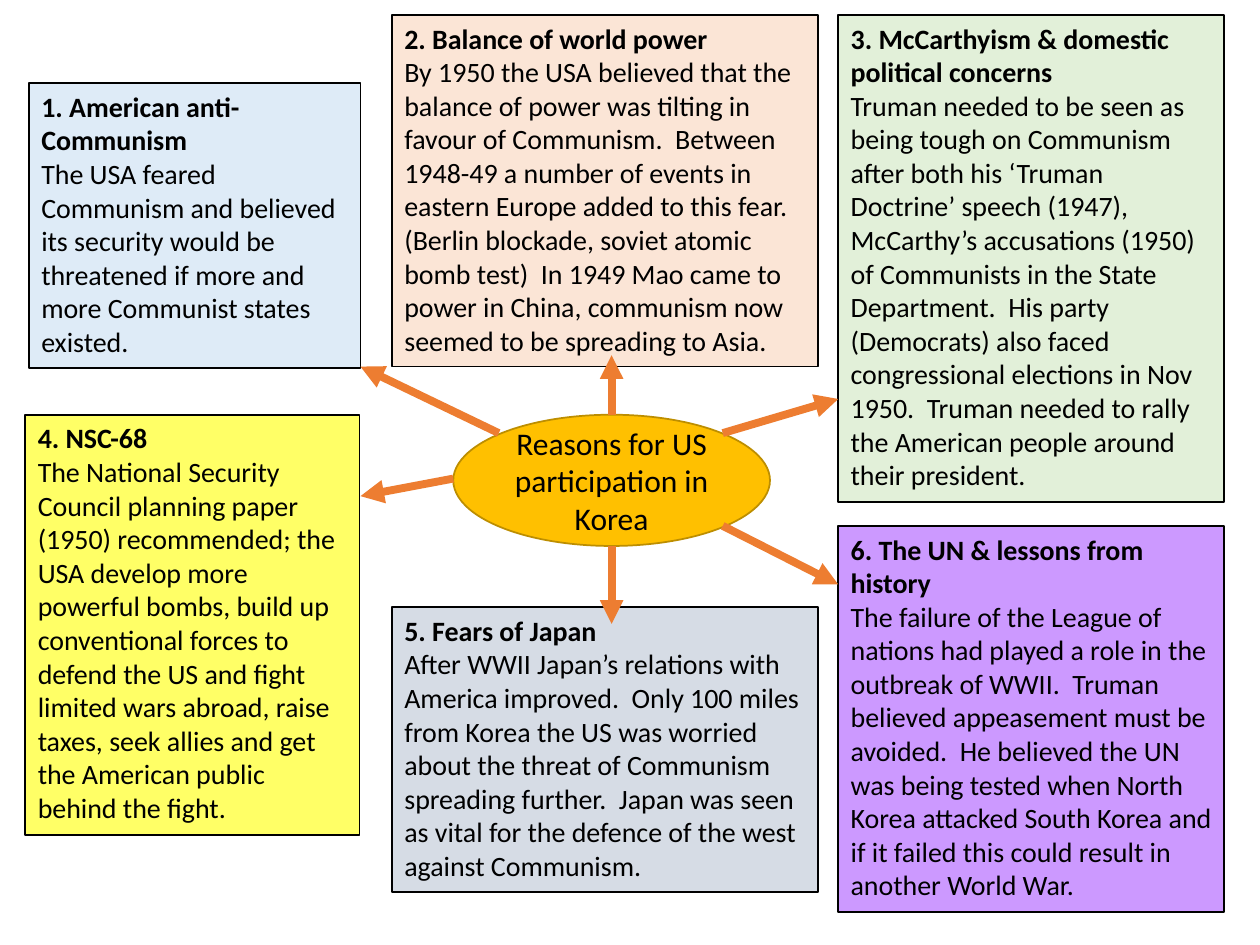
from pptx import Presentation
from pptx.dml.color import RGBColor
from pptx.enum.shapes import MSO_CONNECTOR, MSO_SHAPE
from pptx.enum.text import MSO_ANCHOR, MSO_AUTO_SIZE, PP_ALIGN
from pptx.oxml.ns import qn
from pptx.util import Pt
from lxml.etree import SubElement

FONT = "Calibri"
BLACK = RGBColor(0x00, 0x00, 0x00)
GOLD = RGBColor(0xFF, 0xC0, 0x00)
DARK_GOLD = RGBColor(0xBD, 0x8E, 0x00)
ORANGE = RGBColor(0xED, 0x7D, 0x31)
BLUE = RGBColor(0xDE, 0xEB, 0xF7)
PEACH = RGBColor(0xFB, 0xE5, 0xD6)
GREEN = RGBColor(0xE2, 0xF0, 0xD9)
YELLOW = RGBColor(0xFF, 0xFF, 0x66)
GREY = RGBColor(0xD6, 0xDC, 0xE5)
PURPLE = RGBColor(0xCC, 0x99, 0xFF)

MIDDLE_X, MIDDLE_W = 224, 243.5
RIGHT_X, RIGHT_W = 479, 220.5
LEFT_EDGE = 206
CENTRE_X = 349.5

REASONS = [
    ((16.5, 47.5, 189.5, 163), BLUE, "1. American anti-Communism",
     "The USA feared Communism and believed its security would be threatened "
     "if more and more Communist states existed."),
    ((MIDDLE_X, 8.5, MIDDLE_W, 201), PEACH, "2. Balance of world power",
     "By 1950 the USA believed that the balance of power was tilting in favour "
     "of Communism.  Between 1948-49 a number of events in eastern Europe added "
     "to this fear. (Berlin blockade, soviet atomic bomb test)  In 1949 Mao came "
     "to power in China, communism now seemed to be spreading to Asia."),
    ((RIGHT_X, 8.5, RIGHT_W, 278.5), GREEN,
     "3. McCarthyism & domestic political concerns",
     "Truman needed to be seen as being tough on Communism after both his "
     "‘Truman Doctrine’ speech (1947), McCarthy’s accusations (1950) of "
     "Communists in the State Department.  His party (Democrats) also faced "
     "congressional elections in Nov 1950.  Truman needed to rally the American "
     "people around their president."),
    ((14.5, 237, 191, 240), YELLOW, "4. NSC-68",
     "The National Security Council planning paper (1950) recommended; the USA "
     "develop more powerful bombs, build up conventional forces to defend the US "
     "and fight limited wars abroad, raise taxes, seek allies and get the "
     "American public behind the fight."),
    ((MIDDLE_X, 347, MIDDLE_W, 163), GREY, "5. Fears of Japan",
     "After WWII Japan’s relations with America improved.  Only 100 miles from "
     "Korea the US was worried about the threat of Communism spreading further.  "
     "Japan was seen as vital for the defence of the west against Communism."),
    ((RIGHT_X, 300.5, RIGHT_W, 220.5), PURPLE, "6. The UN & lessons from history",
     "The failure of the League of nations had played a role in the outbreak of "
     "WWII.  Truman believed appeasement must be avoided.  He believed the UN was "
     "being tested when North Korea attacked South Korea and if it failed this "
     "could result in another World War."),
]

ARROWS = [
    (285, 247.5, LEFT_EDGE, 209.5),
    (CENTRE_X, 237, CENTRE_X, 203),
    (259, 273.5, LEFT_EDGE, 283.5),
    (413, 247.5, RIGHT_X, 228),
    (CENTRE_X, 312, CENTRE_X, 356.5),
    (413, 300.5, RIGHT_X, 334),
]


def set_colours(sp, fill, line):
    sp.fill.solid()
    sp.fill.fore_color.rgb = fill
    sp.line.color.rgb = line
    sp.line.width = Pt(1)


def set_text(p, text, size, bold=False):
    p.text = text
    p.font.name = FONT
    p.font.size = Pt(size)
    p.font.bold = bold
    p.font.color.rgb = BLACK


def add_topic(s, text):
    sp = s.shapes.add_shape(MSO_SHAPE.OVAL, Pt(259), Pt(237), Pt(181), Pt(75))
    sp.shadow.inherit = False
    set_colours(sp, GOLD, DARK_GOLD)
    tf = sp.text_frame
    tf.word_wrap = True
    tf.vertical_anchor = MSO_ANCHOR.MIDDLE
    p = tf.paragraphs[0]
    p.alignment = PP_ALIGN.CENTER
    set_text(p, text, 18)


def add_reason(s, box, fill, heading, body):
    sp = s.shapes.add_textbox(*map(Pt, box))
    set_colours(sp, fill, BLACK)
    tf = sp.text_frame
    tf.word_wrap = True
    tf.auto_size = MSO_AUTO_SIZE.SHAPE_TO_FIT_TEXT
    set_text(tf.paragraphs[0], heading, 16, bold=True)
    set_text(tf.add_paragraph(), body, 16)


def add_arrow(s, ends):
    cn = s.shapes.add_connector(MSO_CONNECTOR.STRAIGHT, *map(Pt, ends))
    cn.line.color.rgb = ORANGE
    cn.line.width = Pt(4.5)
    SubElement(cn.line._get_or_add_ln(), qn("a:tailEnd"), type="triangle")
    SubElement(cn._element.spPr, qn("a:effectLst"))


def main():
    prs = Presentation()
    prs.slide_width, prs.slide_height = Pt(720), Pt(540)
    s = prs.slides.add_slide(prs.slide_layouts[6])
    add_topic(s, "Reasons for US participation in Korea")
    for reason in REASONS:
        add_reason(s, *reason)
    for ends in ARROWS:
        add_arrow(s, ends)
    prs.save("out.pptx")


if __name__ == "__main__":
    main()
